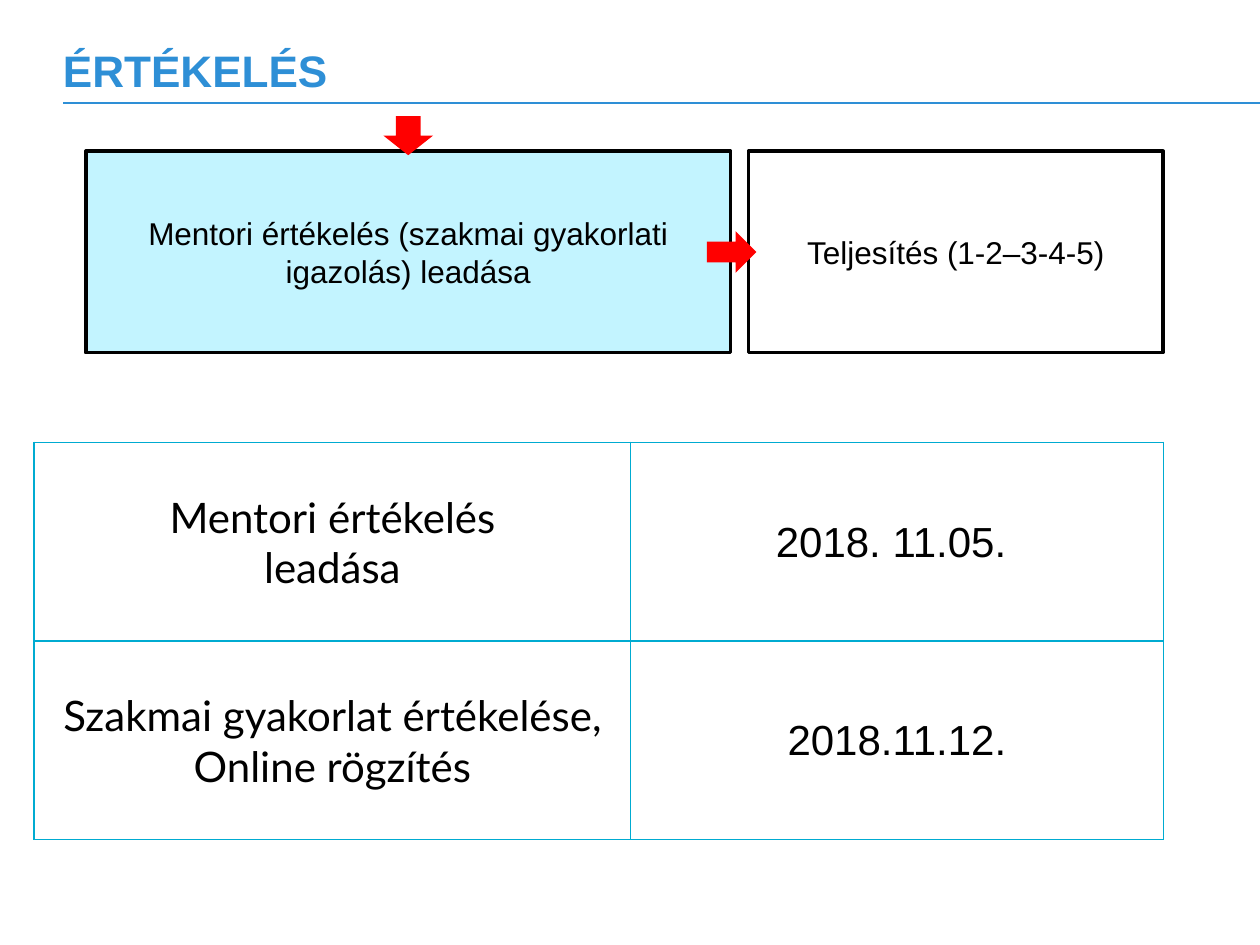
from dataclasses import dataclass

from lxml import etree
from pptx import Presentation
from pptx.dml.color import RGBColor
from pptx.enum.shapes import MSO_CONNECTOR, MSO_SHAPE
from pptx.enum.text import MSO_ANCHOR, PP_ALIGN
from pptx.oxml.ns import qn
from pptx.util import Cm, Pt

CENTER = PP_ALIGN.CENTER
MIDDLE = MSO_ANCHOR.MIDDLE
RECTANGLE = MSO_SHAPE.RECTANGLE
RIGHT_ARROW = MSO_SHAPE.RIGHT_ARROW
DOWN_ARROW = MSO_SHAPE.DOWN_ARROW
STRAIGHT = MSO_CONNECTOR.STRAIGHT


@dataclass(frozen=True)
class Theme:
    accent: str = "2E8FD6"
    text: str = "000000"
    white: str = "FFFFFF"
    highlight: str = "C3F4FF"
    arrow: str = "FF0000"
    grid: str = "00ABD1"
    font: str = "Arial"
    label_font: str = "Lato"
    title_size: float = 25.2
    step_size: float = 18
    table_size: float = 24


THEME = Theme()


def rgb(value):
    return RGBColor.from_string(value)


def write(frame, text, size, font=THEME.font, color=THEME.text, bold=False, align=None):
    frame.word_wrap = True
    frame.vertical_anchor = MIDDLE
    frame.text = text
    for paragraph in frame.paragraphs:
        paragraph.alignment = align
        paragraph.font.size = Pt(size)
        paragraph.font.name = font
        paragraph.font.bold = bold
        paragraph.font.color.rgb = rgb(color)


def add_filled_shape(slide, kind, left, top, width, height, fill, line=None):
    shape = slide.shapes.add_shape(kind, Cm(left), Cm(top), Cm(width), Cm(height))
    shape.shadow.inherit = False
    shape.fill.solid()
    shape.fill.fore_color.rgb = rgb(fill)
    if line:
        shape.line.color.rgb = rgb(line)
        shape.line.width = Pt(2)
    else:
        shape.line.fill.background()
    return shape


def add_title(slide, left, top, width, height, text):
    box = slide.shapes.add_textbox(Cm(left), Cm(top), Cm(width), Cm(height))
    frame = box.text_frame
    frame.margin_left = frame.margin_right = frame.margin_top = frame.margin_bottom = 0
    write(frame, text, THEME.title_size, color=THEME.accent, bold=True)

    # Rule under the title, running to the slide's right edge
    rule_top = Cm(top + height + 0.27)
    rule = slide.shapes.add_connector(STRAIGHT, Cm(left), rule_top, Cm(25.4), rule_top)
    rule.line.color.rgb = rgb(THEME.accent)
    rule.line.width = Pt(1.5)
    etree.SubElement(rule._element.spPr, qn("a:effectLst"))


def add_process(slide, left, top, width, height, steps):
    first_width, gap = 13.0, 0.36
    second_left = left + first_width + gap
    boxes = (
        (left, first_width, THEME.highlight),
        (second_left, width - first_width - gap, THEME.white),
    )
    for text, (box_left, box_width, fill) in zip(steps, boxes):
        shape = add_filled_shape(
            slide, RECTANGLE, box_left, top, box_width, height, fill, THEME.text)
        write(shape.text_frame, text, THEME.step_size, align=CENTER)

    # Arrow between the steps, then arrow into the first step
    add_filled_shape(slide, RIGHT_ARROW, second_left - 0.84, top + height / 2 - 0.42,
                     1.0, 0.84, THEME.arrow)
    add_filled_shape(slide, DOWN_ARROW, left + first_width / 2 - 0.5, top - 0.71,
                     1.0, 0.79, THEME.arrow)


def set_borders(cell, color):
    properties = cell._tc.get_or_add_tcPr()
    for index, side in enumerate(("lnL", "lnR", "lnT", "lnB")):
        line = etree.Element(qn(f"a:{side}"), w=str(Pt(1)))
        fill = etree.SubElement(line, qn("a:solidFill"))
        etree.SubElement(fill, qn("a:srgbClr"), val=color)
        properties.insert(index, line)


def add_deadlines(slide, left, top, width, height, rows):
    first_width = 12.02
    frame = slide.shapes.add_table(
        len(rows), 2, Cm(left), Cm(top), Cm(width), Cm(height))
    table = frame.table
    table.first_row = table.horz_banding = False
    table.columns[0].width = Cm(first_width)
    table.columns[1].width = Cm(width - first_width)
    for row, texts in zip(table.rows, rows):
        for cell, text, font in zip(row.cells, texts, (THEME.label_font, THEME.font)):
            cell.margin_left = cell.margin_right = cell.margin_top = Cm(0.03)
            cell.margin_bottom = 0
            write(cell.text_frame, text, THEME.table_size, font, align=CENTER)
            cell.vertical_anchor = MIDDLE
            cell.fill.solid()
            cell.fill.fore_color.rgb = rgb(THEME.white)
            set_borders(cell, THEME.grid)


def main():
    presentation = Presentation()
    presentation.slide_width = Cm(25.4)
    presentation.slide_height = Cm(19.05)
    slide = presentation.slides.add_slide(presentation.slide_layouts[6])

    add_title(slide, 1.27, 1.02, 22.86, 0.79, "ÉRTÉKELÉS")
    add_process(slide, 1.73, 3.05, 21.72, 4.06, (
        "Mentori értékelés (szakmai gyakorlati igazolás) leadása",
        "Teljesítés (1-2–3-4-5)",
    ))
    add_deadlines(slide, 0.69, 8.92, 22.76, 8.0, (
        ("Mentori értékelés\nleadása", "2018. 11.05. "),
        ("Szakmai gyakorlat értékelése, Online rögzítés", "2018.11.12."),
    ))
    presentation.save("out.pptx")


if __name__ == "__main__":
    main()
